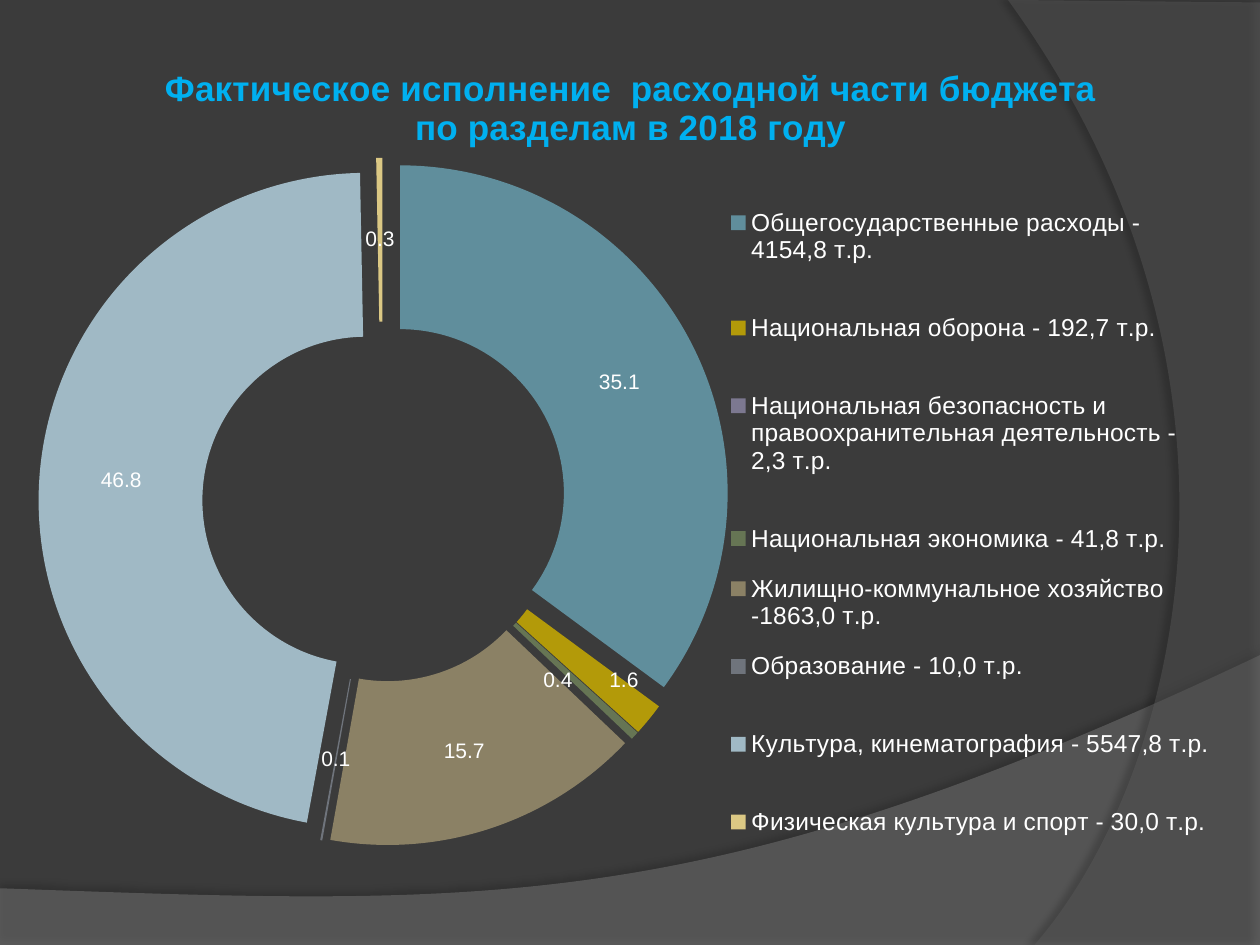
from lxml import etree
from pptx import Presentation
from pptx import util as u
from pptx.chart.data import CategoryChartData
from pptx.dml.color import RGBColor
from pptx.enum import chart as ch
from pptx.oxml.ns import qn

WIDTH, HEIGHT = 10, 7.5
FONT = "Arial"
BACKGROUND = RGBColor(0x3B, 0x3B, 0x3B)
WHITE = RGBColor(0xFF, 0xFF, 0xFF)
TITLE_BLUE = RGBColor(0x00, 0xB0, 0xF0)

TITLE = ["Фактическое исполнение  расходной части бюджета",
         "по разделам в 2018 году"]
# The line feed closing a name spaces out its legend entry.
SECTIONS = [
    ("Общегосударственные расходы - 4154,8 т.р.\n", 35.1, RGBColor(0x60, 0x8E, 0x9C)),
    ("Национальная оборона - 192,7 т.р.\n", 1.6, RGBColor(0xB3, 0x9A, 0x09)),
    ("Национальная безопасность и правоохранительная деятельность - 2,3 т.р.\n",
     None, RGBColor(0x7C, 0x78, 0x90)),
    ("Национальная экономика - 41,8 т.р.", 0.4, RGBColor(0x66, 0x75, 0x54)),
    ("Жилищно-коммунальное хозяйство -1863,0 т.р. ", 15.7, RGBColor(0x8B, 0x81, 0x65)),
    ("Образование - 10,0 т.р.\n", 0.1, RGBColor(0x6F, 0x74, 0x7C)),
    ("Культура, кинематография - 5547,8 т.р.\n", 46.8, RGBColor(0xA0, 0xB9, 0xC5)),
    ("Физическая культура и спорт - 30,0 т.р. \n", 0.3, RGBColor(0xDB, 0xC8, 0x84)),
]
EXPLOSION, FIRST_EXPLOSION = 10, 12
# Each wave: straight corners, then a Bezier curve back from the last corner.
WAVES = [
    dict(corners=[(0, 7.05), (0, 7.5), (10, 7.5), (10, 5.2)],
         curve=[(5.59, 7.29), (3.91, 7.19), (0, 7.05)],
         color=RGBColor(0x7F, 0x7F, 0x7F), alpha=45,
         shadow=dict(alpha=35, blur=4, dist=3.5, angle=270)),
    dict(corners=[(10, 0.02), (10, 7.5), (8.21, 7.5)],
         curve=[(9.35, 6.19), (10.18, 3), (8, 0)],
         color=RGBColor(0x5E, 0x5E, 0x5E), alpha=40,
         shadow=dict(alpha=45, blur=4, dist=4, angle=180)),
]
# Shares of the chart area
PLOT_BOX = dict(x=0.008, y=0.137, w=0.573, h=0.794)
LEGEND_BOX = dict(x=0.583, y=0.17, w=0.405, h=0.807)
TITLE_BOX = dict(x=0.11, y=0.028)
LABEL_SHIFTS = {1: dict(x=0.032, y=0.015), 3: dict(x=-0.014, y=0)}


def add(parent, tag, **attributes):
    return etree.SubElement(parent, qn(tag), {k: str(v) for k, v in attributes.items()})


def bend_end(path_element):
    """Turn the last three straight segments into one Bezier curve."""
    lines = path_element.findall(qn("a:lnTo"))[-3:]
    bend = etree.Element(qn("a:cubicBezTo"))
    lines[0].addprevious(bend)
    for line in lines:
        bend.append(line[0])
        path_element.remove(line)


def add_wave(slide, corners, curve, color, alpha, shadow):
    outline = [(u.Inches(x), u.Inches(y)) for x, y in corners + curve]
    builder = slide.shapes.build_freeform(*outline[0])
    builder.add_line_segments(outline[1:], close=True)
    wave = builder.convert_to_shape()
    properties = wave._element.spPr
    track = properties.find(".//" + qn("a:path"))
    bend_end(track)
    # Control points may reach beyond the slide; the outline itself does not.
    wave.width = u.Inches(WIDTH) - wave.left
    track.set("w", str(wave.width))

    wave.fill.solid()
    wave.fill.fore_color.rgb = color
    wave.line.fill.background()
    add(properties.find(".//" + qn("a:srgbClr")), "a:alpha", val=alpha * 1000)
    outer = add(add(properties, "a:effectLst"), "a:outerShdw",
                blurRad=u.Pt(shadow["blur"]), dist=u.Pt(shadow["dist"]),
                dir=shadow["angle"] * 60000, algn="ctr", rotWithShape=0)
    black = add(outer, "a:srgbClr", val="000000")
    add(black, "a:alpha", val=shadow["alpha"] * 1000)


def set_layout(element, box, before, mode="edge", inner=False):
    """Place a chart part by shares of the chart, ahead of the first tag in before."""
    for old in element.findall(qn("c:layout")):
        element.remove(old)
    layout = etree.Element(qn("c:layout"))
    manual = add(layout, "c:manualLayout")
    if inner:
        add(manual, "c:layoutTarget", val="inner")
    for key in "xy":
        add(manual, f"c:{key}Mode", val=mode)
    for key, share in box.items():
        add(manual, f"c:{key}", val=share)
    next(e for e in element if e.tag in [qn(t) for t in before]).addprevious(layout)


def set_font(font, size, color=WHITE, bold=False):
    for key, value in dict(name=FONT, size=u.Pt(size), bold=bold).items():
        setattr(font, key, value)
    font.color.rgb = color


def add_title(chart):
    frame = chart.chart_title.text_frame
    for i, line in enumerate(TITLE):
        paragraph = frame.add_paragraph() if i else frame.paragraphs[0]
        run = paragraph.add_run()
        run.text = line
        set_font(run.font, 20, TITLE_BLUE, bold=True)
    chart.chart_title.include_in_layout = False
    set_layout(chart.chart_title._element, TITLE_BOX, ["c:overlay"])


def add_legend(chart):
    chart.has_legend = True
    legend = chart.legend
    legend.position = ch.XL_LEGEND_POSITION.RIGHT
    legend.include_in_layout = False
    set_font(legend.font, 14)
    set_layout(legend._element, LEGEND_BOX, ["c:overlay"])


def add_labels(shares):
    shares.data_labels.show_value = True
    shares.data_labels.show_percentage = False
    set_font(shares.data_labels.font, 12)
    for i, shift in LABEL_SHIFTS.items():
        set_font(shares.points[i].data_label.font, 12)
        label = next(e for e in shares._element.iter(qn("c:dLbl"))
                     if e.find(qn("c:idx")).get("val") == str(i))
        set_layout(label, shift, ["c:spPr", "c:txPr", "c:showLegendKey"], mode="factor")


def add_budget_chart(slide):
    data = CategoryChartData()
    data.categories = [name for name, _, _ in SECTIONS]
    data.add_series("Series 1", [share for _, share, _ in SECTIONS])
    chart = slide.shapes.add_chart(
        ch.XL_CHART_TYPE.DOUGHNUT, u.Inches(0.23), u.Inches(0.31),
        u.Inches(9.53), u.Inches(6.88), data).chart
    set_font(chart.font, 12)
    add_title(chart)
    add_legend(chart)
    chart.plots[0].vary_by_categories = True
    set_layout(chart._chartSpace.chart.plotArea, PLOT_BOX, ["c:doughnutChart"], inner=True)

    shares = chart.plots[0].series[0]
    for i, (_, _, color) in enumerate(SECTIONS):
        point = shares.points[i].format
        point.fill.solid()
        point.fill.fore_color.rgb = color
        point.line.fill.background()
    first = shares._element.find(qn("c:dPt"))
    for following, value in [(first, EXPLOSION), (first.find(qn("c:spPr")), FIRST_EXPLOSION)]:
        following.addprevious(etree.Element(qn("c:explosion"), val=str(value)))
    add_labels(shares)


def main():
    deck = Presentation()
    deck.slide_width, deck.slide_height = u.Inches(WIDTH), u.Inches(HEIGHT)
    slide = deck.slides.add_slide(deck.slide_layouts[6])
    slide.background.fill.solid()
    slide.background.fill.fore_color.rgb = BACKGROUND
    for wave in WAVES:
        add_wave(slide, **wave)
    add_budget_chart(slide)
    deck.save("out.pptx")


if __name__ == "__main__":
    main()
